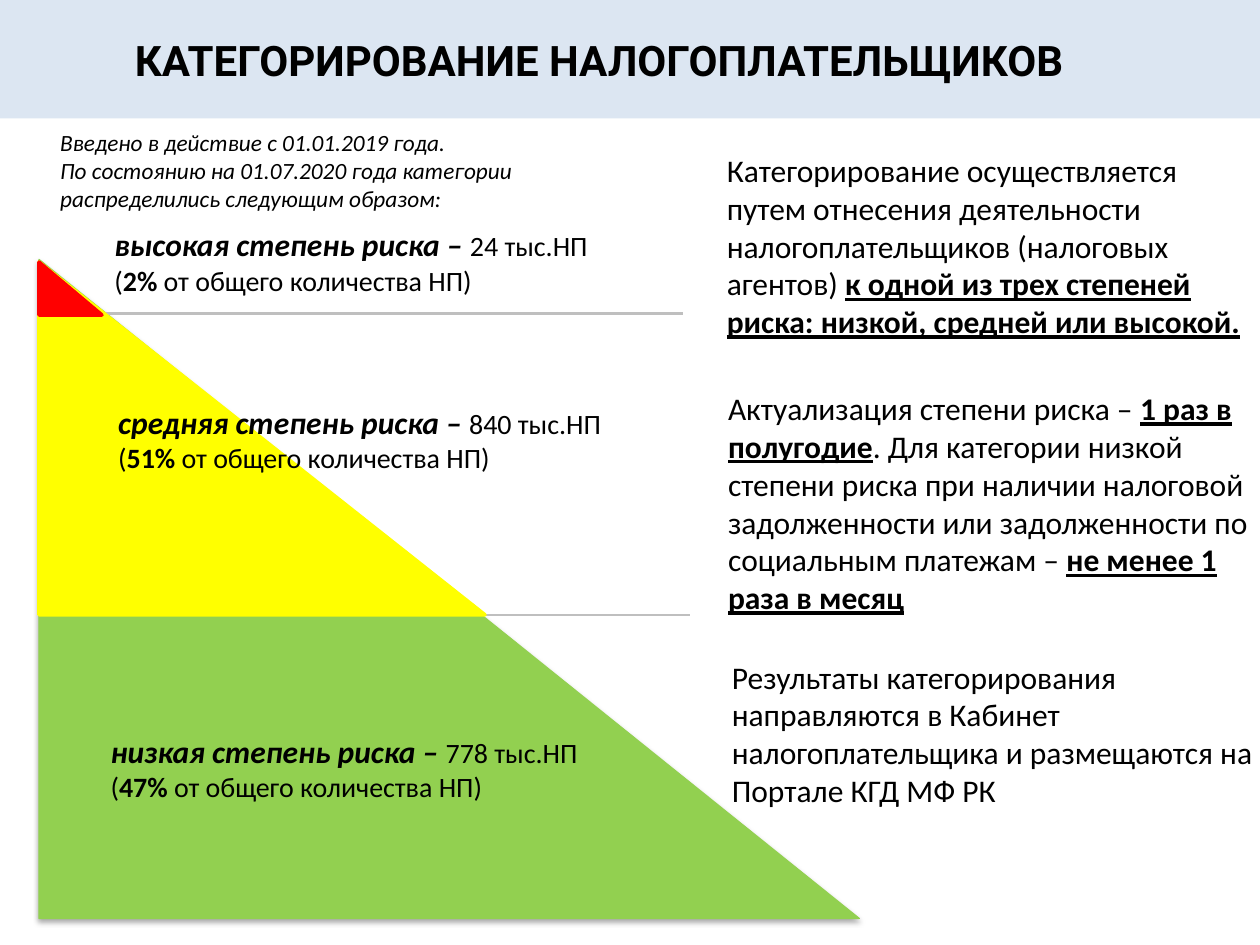
from lxml import etree
from pptx import Presentation
from pptx.dml.color import RGBColor
from pptx.enum.shapes import MSO_CONNECTOR, MSO_SHAPE
from pptx.enum.text import MSO_ANCHOR, PP_ALIGN
from pptx.oxml import parse_xml
from pptx.oxml.ns import nsdecls, qn
from pptx.util import Inches, Pt

RECT = MSO_SHAPE.RECTANGLE
WEDGE = MSO_SHAPE.RIGHT_TRIANGLE
LINE = MSO_CONNECTOR.STRAIGHT
MIDDLE = MSO_ANCHOR.MIDDLE
CENTER = PP_ALIGN.CENTER

BLACK = RGBColor(0x00, 0x00, 0x00)
BAND = RGBColor(0xDC, 0xE6, 0xF2)
GREEN = RGBColor(0x92, 0xD0, 0x50)
YELLOW = RGBColor(0xFF, 0xFF, 0x00)
RED = RGBColor(0xFF, 0x00, 0x00)
GRAY = RGBColor(0xBF, 0xBF, 0xBF)

LEFT = 0.31  # shared left edge of the wedges and rules
SHADOW = (
    f'<a:effectLst {nsdecls("a")}>'
    '<a:outerShdw blurRad="40000" dist="23000" dir="5400000" rotWithShape="0">'
    '<a:srgbClr val="000000"><a:alpha val="35000"/></a:srgbClr>'
    '</a:outerShdw></a:effectLst>'
)

# Name, count, share, left, top
RISKS = [
    ("высокая", "24", "2%", 0.81, 1.74),
    ("средняя", "840", "51%", 0.84, 3.15),
    ("низкая", "778", "47%", 0.78, 5.76),
]

# Left, top, height, runs as (text, stressed)
NOTES = [
    (5.67, 1.15, 1.7, [
        ("Категорирование осуществляется путем отнесения деятельности "
         "налогоплательщиков (налоговых агентов) ", False),
        ("к одной из трех степеней риска: низкой, средней или высокой.", True),
    ]),
    (5.68, 3.04, 1.97, [
        ("Актуализация степени риска – ", False),
        ("1 раз в полугодие", True),
        (". Для категории низкой степени риска при наличии налоговой "
         "задолженности или задолженности по социальным платежам – ", False),
        ("не менее 1 раза в месяц", True),
    ]),
    (5.71, 5.17, 1.97, [
        ("Результаты категорирования направляются в Кабинет "
         "налогоплательщика и размещаются на Портале КГД МФ РК", False),
    ]),
]


def set_font(font, size, name="Calibri"):
    font.name = name
    font.size = Pt(size)
    font.color.rgb = BLACK


def add_run(par, text, bold=False):
    run = par.add_run()
    run.text = text
    run.font.bold = bold
    return run


def add_box(slide, left, top, width, height):
    box = slide.shapes.add_textbox(
        Inches(left), Inches(top), Inches(width), Inches(height))
    box.text_frame.word_wrap = True
    return box.text_frame


def add_title(slide):
    title = slide.shapes.title
    title.left, title.top = Inches(0.41), Inches(0)
    title.width, title.height = Inches(8.69), Inches(0.95)
    frame = title.text_frame
    frame.text = "КАТЕГОРИРОВАНИЕ НАЛОГОПЛАТЕЛЬЩИКОВ"
    frame.vertical_anchor = MIDDLE
    par = frame.paragraphs[0]
    par.alignment = CENTER
    set_font(par.font, 24, "Roboto")
    par.font.bold = True

    # Band behind the title
    band = slide.shapes.add_shape(
        RECT, Inches(0), Inches(0), Inches(10), Inches(0.94))
    band.shadow.inherit = False
    band.fill.solid()
    band.fill.fore_color.rgb = BAND
    band.line.fill.background()
    title.element.addprevious(band.element)


def add_wedge(slide, top, width, height, color, weight):
    wedge = slide.shapes.add_shape(
        WEDGE, Inches(LEFT), Inches(top), Inches(width), Inches(height))
    wedge.shadow.inherit = False
    wedge.fill.solid()
    wedge.fill.fore_color.rgb = color
    wedge.line.color.rgb = color
    wedge.line.width = Pt(weight)
    return wedge


def add_rule(slide, right, y):
    rule = slide.shapes.add_connector(
        LINE, Inches(LEFT), Inches(y), Inches(right), Inches(y))
    rule.line.color.rgb = GRAY
    rule.line.width = Pt(1.5)
    etree.SubElement(rule.element.spPr, qn("a:effectLst"))


def add_risk(slide, name, count, share, left, top):
    frame = add_box(slide, left, top, 4.64, 0.67)
    head, tail = frame.paragraphs[0], frame.add_paragraph()
    for par in (head, tail):
        set_font(par.font, 16)
    label = add_run(head, f"{name} степень риска – ", True)
    label.font.size = Pt(18)
    label.font.italic = True
    add_run(head, f"{count} тыс.НП")
    add_run(tail, "(")
    add_run(tail, share, True)
    add_run(tail, " от общего количества НП)")


def add_intro(slide):
    frame = add_box(slide, 0.38, 0.97, 4.23, 0.77)
    frame.text = ("Введено в действие с 01.01.2019 года.\n"
                  "По состоянию на 01.07.2020 года категории "
                  "распределились следующим образом:")
    for par in frame.paragraphs:
        set_font(par.font, 13.3)
        par.font.italic = True


def add_note(slide, left, top, height, runs):
    par = add_box(slide, left, top, 4.33, height).paragraphs[0]
    set_font(par.font, 18)
    par.space_before = Pt(3.6)
    for text, stress in runs:
        add_run(par, text, stress).font.underline = stress


def main():
    deck = Presentation()
    deck.slide_width, deck.slide_height = Inches(10), Inches(7.5)
    slide = deck.slides.add_slide(deck.slide_layouts[5])
    add_title(slide)

    # Risk pyramid: green base, rules, then the upper tiers
    base = add_wedge(slide, 2.06, 6.51, 5.23, GREEN, 0.75)
    props = base.element.spPr
    props.replace(props.find(qn("a:effectLst")), parse_xml(SHADOW))
    add_rule(slide, 5.48, 4.88)
    add_rule(slide, 5.42, 2.49)
    add_wedge(slide, 2.08, 3.54, 2.8, YELLOW, 2)
    add_wedge(slide, 2.08, 0.5, 0.42, RED, 2)

    # Texts
    for risk in RISKS:
        add_risk(slide, *risk)
    add_intro(slide)
    for note in NOTES:
        add_note(slide, *note)

    deck.save("out.pptx")


if __name__ == "__main__":
    main()
